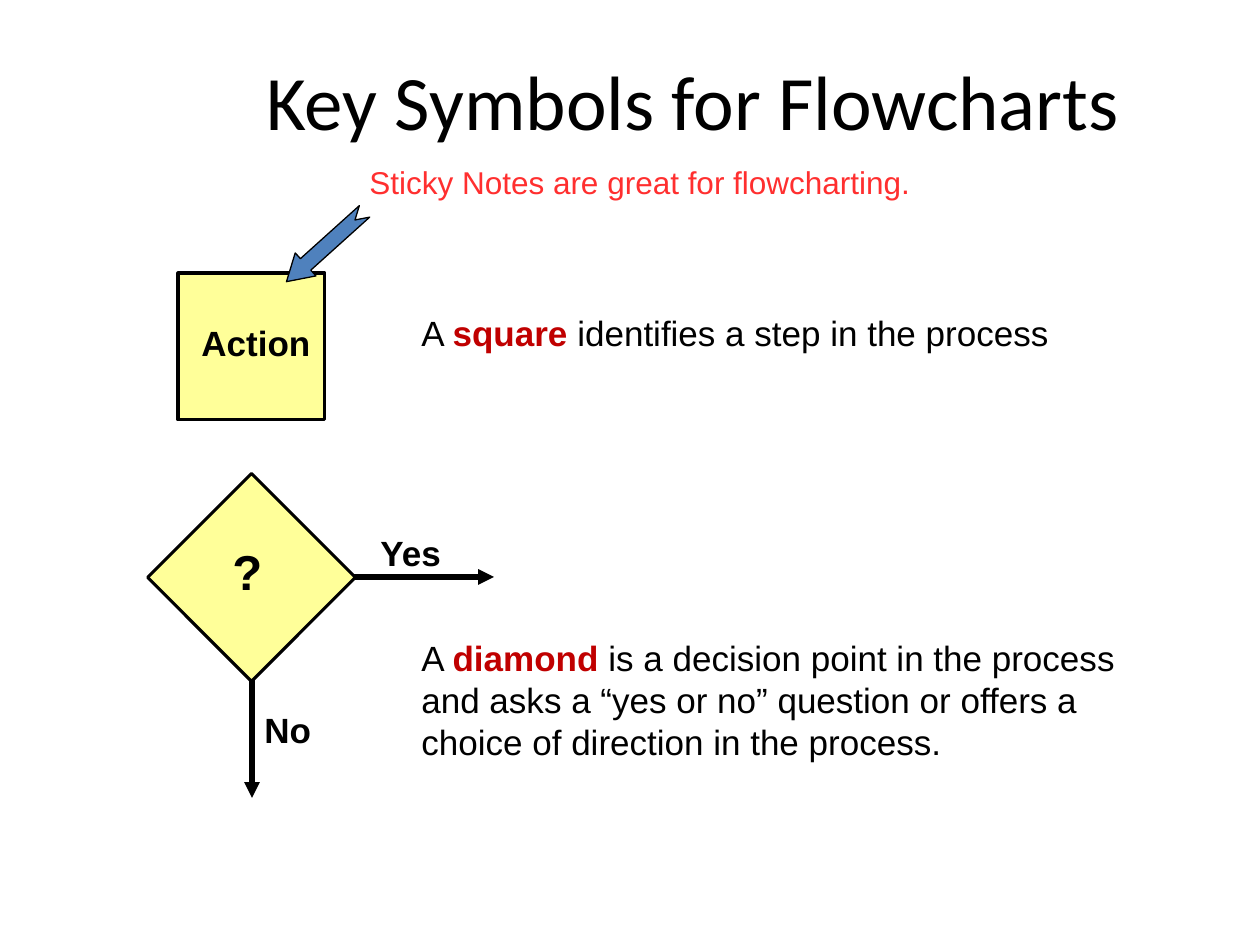
from lxml.etree import SubElement
from pptx import Presentation
from pptx.dml.color import RGBColor
from pptx.enum.shapes import MSO_CONNECTOR, MSO_SHAPE
from pptx.enum.text import MSO_ANCHOR, MSO_AUTO_SIZE, PP_ALIGN
from pptx.oxml.ns import qn
from pptx.util import Emu, Pt

PX_PER_INCH = 126
SYMBOL_SIDE = 147
COLORS = {
    "ink": "000000",
    "symbol": "FFFF99",
    "keyword": "C00000",
    "tip": "FF2F2F",
    "pointer": "4F81BD",
}


def px(length):
    """Turn pixels into EMU."""
    return Emu(round(length * 914400 / PX_PER_INCH))


def color(name):
    """Look up a colour by its role."""
    return RGBColor.from_string(COLORS[name])


def add_run(paragraph, text, size, role="ink", bold=False, font="Arial"):
    """Append one formatted run."""
    run = paragraph.add_run()
    run.text = text
    run.font.name = font
    run.font.size = Pt(size)
    run.font.bold = bold
    run.font.color.rgb = color(role)


def set_title(slide, text):
    """Place the heading in the title placeholder."""
    title = slide.shapes.title
    title.left, title.top, title.width, title.height = map(px, (126, 42, 1134, 157))
    frame = title.text_frame
    frame.vertical_anchor = MSO_ANCHOR.TOP
    frame.margin_top = px(11)
    heading = frame.paragraphs[0]
    heading.alignment = PP_ALIGN.CENTER
    add_run(heading, text, 44, font="Calibri")


def add_text(slide, box, size, *runs):
    """Add a wrapped text box made of (text, role, bold) runs."""
    frame = slide.shapes.add_textbox(*map(px, box)).text_frame
    frame.word_wrap = True
    frame.auto_size = MSO_AUTO_SIZE.SHAPE_TO_FIT_TEXT
    paragraph = frame.paragraphs[0]
    paragraph.space_before = Pt(size / 10)
    for text, role, bold in runs:
        add_run(paragraph, text, size, role, bold)


def add_definition(slide, box, keyword, meaning):
    """Explain a symbol with its name highlighted."""
    add_text(slide, box, 20, ("A ", "ink", False),
             (keyword, "keyword", True), (meaning, "ink", False))


def add_figure(slide, kind, box, fill, line_width, rotation=0):
    """Add a filled and outlined preset shape."""
    figure = slide.shapes.add_shape(kind, *map(px, box))
    figure.shadow.inherit = False
    figure.rotation = rotation
    figure.fill.solid()
    figure.fill.fore_color.rgb = color(fill)
    figure.line.color.rgb = color("ink")
    figure.line.width = Pt(line_width)
    return figure


def add_branch(slide, start, end):
    """Draw an arrow leaving the decision diamond."""
    branch = slide.shapes.add_connector(MSO_CONNECTOR.STRAIGHT, *map(px, start + end))
    branch.line.color.rgb = color("ink")
    branch.line.width = Pt(3)
    SubElement(branch.line._get_or_add_ln(), qn("a:tailEnd"), type="triangle")
    SubElement(branch._element.spPr, qn("a:effectLst"))


def main():
    """Build the flowchart symbols slide."""
    deck = Presentation()
    deck.slide_width, deck.slide_height = px(1260), px(945)
    slide = deck.slides.add_slide(deck.slide_layouts[5])
    set_title(slide, "Key Symbols for Flowcharts")

    add_branch(slide, (252, 672), (252, 798))
    add_branch(slide, (346, 577), (494, 577))
    for top, rotation in ((273, 0), (504, 45)):
        add_figure(slide, MSO_SHAPE.RECTANGLE,
                   (178, top, SYMBOL_SIDE, SYMBOL_SIDE), "symbol", 1.75, rotation)

    for text, size, box in (
        ("?", 28, (220, 535, 53, 72)),
        ("No", 20, (252, 702, 84, 54)),
        ("Yes", 20, (368, 525, 105, 54)),
        ("Action", 20, (189, 315, 147, 54)),
    ):
        add_text(slide, box, size, (text, "ink", True))

    add_definition(slide, (409, 305, 725, 55), "square",
                   " identifies a step in the process")
    add_definition(slide, (409, 630, 756, 140), "diamond",
                   " is a decision point in the process and asks a “yes or no” "
                   "question or offers a choice of direction in the process.")
    add_text(slide, (357, 157, 766, 64), 18,
             ("Sticky Notes are great for flowcharting.", "tip", False))

    pointer = add_figure(slide, MSO_SHAPE.NOTCHED_RIGHT_ARROW,
                         (273, 231, 105, 31), "pointer", 0.75, 138)
    pointer.adjustments[0] = 0.5
    pointer.adjustments[1] = 0.83
    deck.save("out.pptx")


if __name__ == "__main__":
    main()
